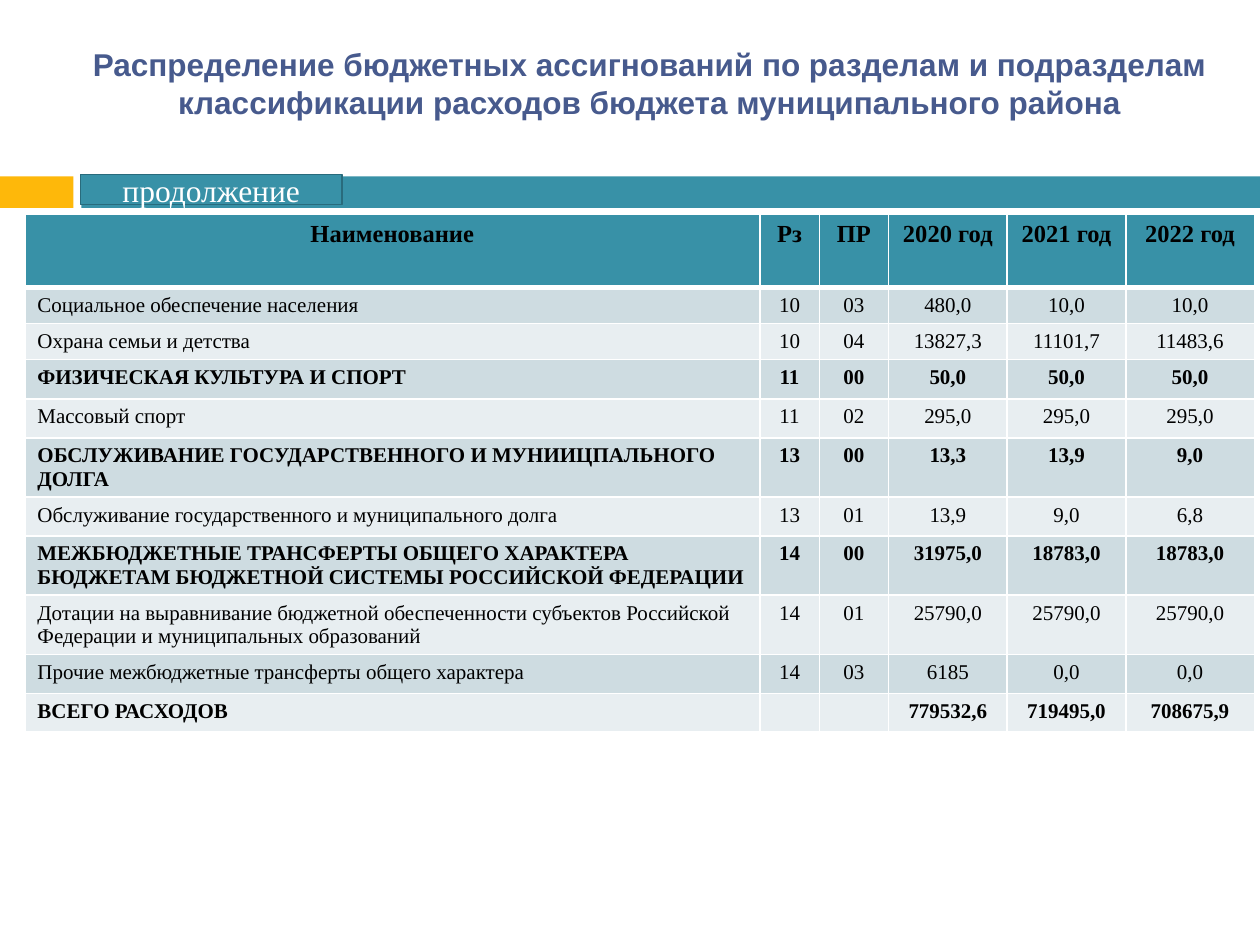
import pptx
import pptx.dml.color
import pptx.enum.shapes
import pptx.enum.text
import pptx.oxml
import pptx.oxml.ns
import pptx.util

Pt = pptx.util.Pt
RGB = pptx.dml.color.RGBColor
ALIGN = pptx.enum.text.PP_ALIGN
MIDDLE = pptx.enum.text.MSO_ANCHOR.MIDDLE

TEAL = RGB(0x38, 0x91, 0xA7)
EDGE = RGB(0x29, 0x6B, 0x7C)
GOLD = RGB(0xFE, 0xB8, 0x0A)
NAVY = RGB(0x47, 0x5A, 0x8D)
BLACK = RGB(0, 0, 0)
WHITE = RGB(0xFF, 0xFF, 0xFF)
BANDS = [RGB(0xCE, 0xDC, 0xE1), RGB(0xE8, 0xEE, 0xF1)]
SERIF = "Times New Roman"

# Content
TITLE = ("Распределение бюджетных ассигнований по разделам и подразделам "
         "классификации расходов бюджета муниципального района")
NOTE = "продолжение"
HEAD = ("Наименование", "Рз", "ПР", "2020 год", "2021 год", "2022 год")
# Each row: bold, height, cells
ROWS = [
    (False, 15.1, ("Социальное обеспечение населения",
                   "10", "03", "480,0", "10,0", "10,0")),
    (False, 15.8, ("Охрана семьи и детства",
                   "10", "04", "13827,3", "11101,7", "11483,6")),
    (True, 22.5, ("ФИЗИЧЕСКАЯ КУЛЬТУРА И СПОРТ",
                  "11", "00", "50,0", "50,0", "50,0")),
    (False, 22.2, ("Массовый спорт",
                   "11", "02", "295,0", "295,0", "295,0")),
    (True, 19.4, ("ОБСЛУЖИВАНИЕ ГОСУДАРСТВЕННОГО И МУНИИЦПАЛЬНОГО ДОЛГА",
                  "13", "00", "13,3", "13,9", "9,0")),
    (False, 22.2, ("Обслуживание государственного и муниципального долга",
                   "13", "01", "13,9", "9,0", "6,8")),
    (True, 22.2, ("МЕЖБЮДЖЕТНЫЕ ТРАНСФЕРТЫ ОБЩЕГО ХАРАКТЕРА БЮДЖЕТАМ "
                  "БЮДЖЕТНОЙ СИСТЕМЫ РОССИЙСКОЙ ФЕДЕРАЦИИ",
                  "14", "00", "31975,0", "18783,0", "18783,0")),
    (False, 22.2, ("Дотации на выравнивание бюджетной обеспеченности субъектов "
                   "Российской Федерации и муниципальных образований",
                   "14", "01", "25790,0", "25790,0", "25790,0")),
    (False, 22.2, ("Прочие межбюджетные трансферты общего характера",
                   "14", "03", "6185", "0,0", "0,0")),
    (True, 22.2, ("ВСЕГО РАСХОДОВ",
                  "", "", "779532,6", "719495,0", "708675,9")),
]
WIDTHS = (420, 34, 39.6, 67.8, 67.8, 73.4)
HEAD_H = 41.8


def write(frame, text, size, color, font, bold=False, align=ALIGN.CENTER):
    para = frame.paragraphs[0]
    para.alignment = align
    if not text:
        # An empty cell keeps the row's text size
        end = pptx.oxml.parse_xml(
            f'<a:endParaRPr {pptx.oxml.ns.nsdecls("a")} sz="{size * 100}"/>')
        para._p.append(end)
        return
    run = para.add_run()
    run.text = text
    run.font.size = Pt(size)
    run.font.name = font
    run.font.bold = bold
    run.font.color.rgb = color


def add_bar(shapes, box, fill, line=None):
    bar = shapes.add_shape(pptx.enum.shapes.MSO_SHAPE.RECTANGLE,
                           *[Pt(v) for v in box])
    bar.shadow.inherit = False
    bar.fill.solid()
    bar.fill.fore_color.rgb = fill
    if line is None:
        bar.line.fill.background()
    else:
        bar.line.color.rgb = line
        bar.line.width = Pt(0)
    return bar


def add_edges(cell, top, bottom):
    props = cell._tc.get_or_add_tcPr()
    for side, width in (("L", 1), ("R", 1), ("T", top), ("B", bottom)):
        props.append(pptx.oxml.parse_xml(
            f'<a:ln{side} {pptx.oxml.ns.nsdecls("a")} w="{Pt(width)}">'
            f'<a:solidFill><a:srgbClr val="{WHITE}"/></a:solidFill>'
            f'</a:ln{side}>'))


def add_grid(shapes):
    rows = [(True, HEAD_H, HEAD)] + ROWS
    grid = shapes.add_table(len(rows), len(WIDTHS), Pt(14.2), Pt(122.6),
                            Pt(sum(WIDTHS)), Pt(sum(r[1] for r in rows))).table
    for col, width in zip(grid.columns, WIDTHS):
        col.width = Pt(width)
    for i, (bold, height, texts) in enumerate(rows):
        grid.rows[i].height = Pt(height)
        for j, text in enumerate(texts):
            cell = grid.cell(i, j)
            add_edges(cell, 3 if i == 1 else 1, 3 if i == 0 else 1)
            cell.fill.solid()
            cell.fill.fore_color.rgb = BANDS[(i - 1) % 2] if i else TEAL
            left = i > 0 and j == 0
            write(cell.text_frame, text, 12 if i else 14, BLACK, SERIF, bold,
                  ALIGN.LEFT if left else ALIGN.CENTER)


def main():
    deck = pptx.Presentation()
    deck.slide_width, deck.slide_height = Pt(720), Pt(540)
    slide = deck.slides.add_slide(deck.slide_layouts[5])
    shapes = slide.shapes

    # Band under the title
    add_bar(shapes, (0, 100.8, 42, 18), GOLD)
    add_bar(shapes, (46.5, 100.8, 673.5, 18), TEAL)

    # Title
    title = shapes.title
    title.left, title.top = Pt(31), Pt(18)
    title.width, title.height = Pt(680.4), Pt(59)
    title.text_frame.auto_size = pptx.enum.text.MSO_AUTO_SIZE.NONE
    title.text_frame.vertical_anchor = MIDDLE
    write(title.text_frame, TITLE, 18, NAVY, "Arial", True)

    # Table
    add_grid(shapes)

    # Continuation label
    label = add_bar(shapes, (46, 99.8, 149.4, 17.3), TEAL, EDGE)
    label.text_frame.vertical_anchor = MIDDLE
    write(label.text_frame, NOTE, 18, WHITE, SERIF)

    deck.save("out.pptx")


if __name__ == "__main__":
    main()
